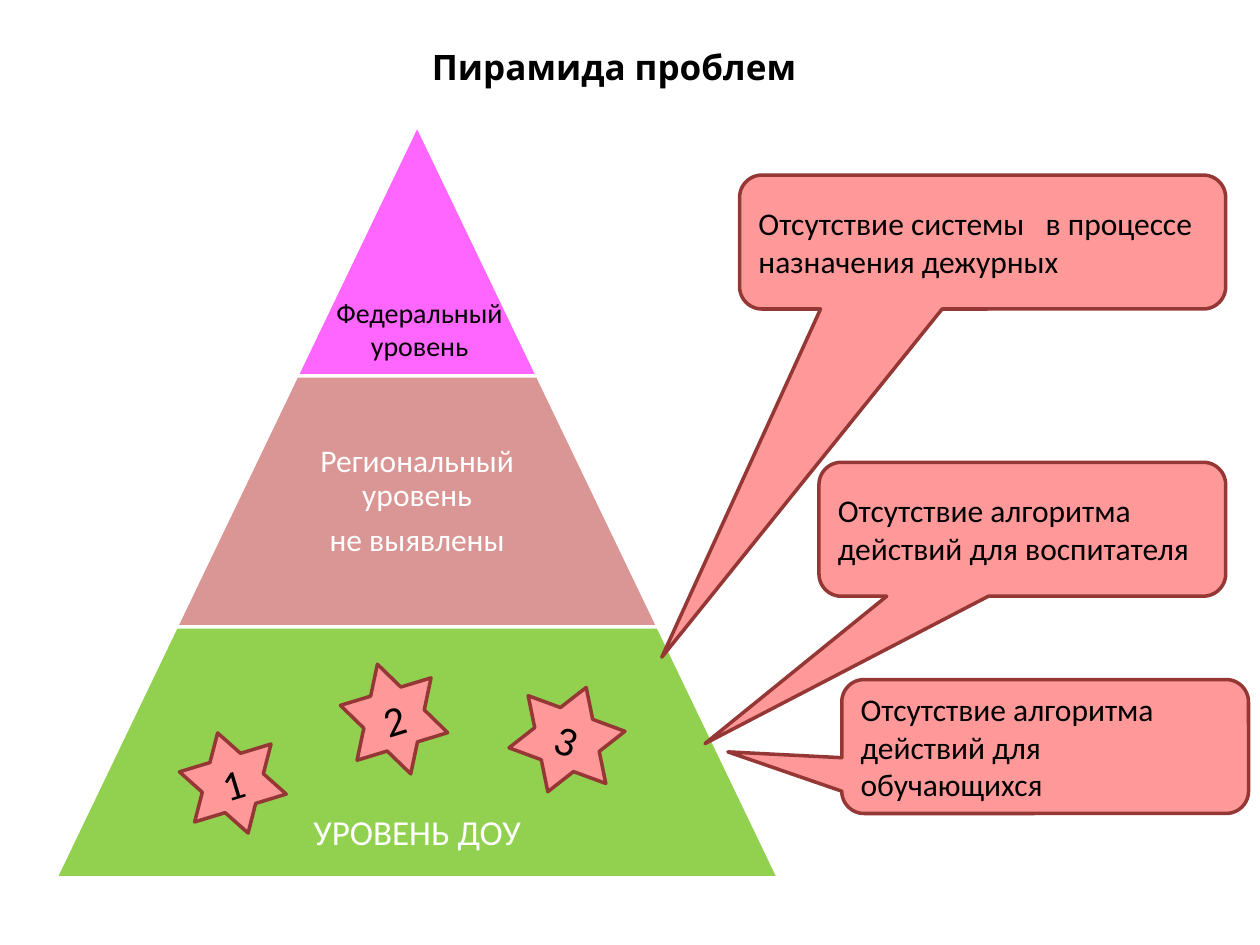
from dataclasses import dataclass

import pptx
import pptx.dml.color
import pptx.enum.shapes
import pptx.enum.text
import pptx.util

Cm = pptx.util.Cm
Pt = pptx.util.Pt
Shape = pptx.enum.shapes.MSO_SHAPE
Align = pptx.enum.text.PP_ALIGN
Anchor = pptx.enum.text.MSO_ANCHOR


@dataclass(frozen=True)
class Theme:
    title_font: str = "Karla"
    body_font: str = "Calibri"
    black: str = "000000"
    white: str = "FFFFFF"
    federal: str = "FF66FF"
    regional: str = "D99694"
    kindergarten: str = "92D050"
    problem: str = "FF9999"
    problem_edge: str = "953735"
    edge_width: float = 2
    small: int = 16
    body: int = 18
    large: int = 20
    number: int = 24


THEME = Theme()


@dataclass(frozen=True)
class Box:
    """Left, top, width and height in centimetres."""
    left: float
    top: float
    width: float
    height: float

    def lengths(self) -> tuple:
        return Cm(self.left), Cm(self.top), Cm(self.width), Cm(self.height)


@dataclass(frozen=True)
class Star:
    number: str
    box: Box
    rotation: float


@dataclass(frozen=True)
class Callout:
    text: str
    box: Box
    tip: tuple


# Pyramid geometry, in centimetres
APEX_X, APEX_Y = 8.41, 2.52
TIER_HEIGHT, TIER_HALF_WIDTH = 5.06, 2.43

TIER_FILLS = (THEME.federal, THEME.regional, THEME.kindergarten)

STARS = (
    Star("1", Box(3.73, 14.73, 1.93, 2.11), 343.1),
    Star("2", Box(6.99, 13.34, 1.91, 2.31), 343.1),
    Star("3", Box(10.39, 13.79, 2.08, 2.24), 20.2),
)

CALLOUTS = (
    Callout("Отсутствие системы   в процессе назначения дежурных",
            Box(14.91, 3.53, 9.8, 2.7), (-0.66, 3.1)),
    Callout("Отсутствие алгоритма действий для воспитателя",
            Box(16.51, 9.32, 8.2, 2.7), (-0.78, 1.6)),
    Callout("Отсутствие алгоритма действий для обучающихся",
            Box(16.97, 13.7, 8.2, 2.7), (-0.78, 0.04)),
)


def rgb(color: str) -> pptx.dml.color.RGBColor:
    return pptx.dml.color.RGBColor.from_string(color)


def write(frame, text: str, *, size: int = THEME.body, color: str = THEME.black,
          font: str = THEME.body_font, bold: bool = False, align=Align.CENTER,
          anchor=Anchor.MIDDLE, wrap: bool = True, line_spacing: float = 1.0,
          space_after: float = 0) -> None:
    """Fill a text frame, one paragraph for each line of text."""
    frame.text = text
    frame.word_wrap = wrap
    frame.vertical_anchor = anchor
    for paragraph in frame.paragraphs:
        paragraph.alignment = align
        paragraph.line_spacing = line_spacing
        paragraph.space_after = Pt(space_after)
        for run in paragraph.runs:
            run.font.name = font
            run.font.size = Pt(size)
            run.font.bold = bold
            run.font.color.rgb = rgb(color)


def add_figure(slide, kind, box: Box, fill: str, edge: str):
    figure = slide.shapes.add_shape(kind, *box.lengths())
    figure.shadow.inherit = False
    figure.fill.solid()
    figure.fill.fore_color.rgb = rgb(fill)
    figure.line.color.rgb = rgb(edge)
    figure.line.width = Pt(THEME.edge_width)
    return figure


def add_label(slide, text: str, box: Box, *, margin: float, bottom: float,
              **text_format) -> None:
    label = slide.shapes.add_textbox(*box.lengths())
    frame = label.text_frame
    frame.margin_left = frame.margin_right = frame.margin_top = Cm(margin)
    frame.margin_bottom = Cm(bottom)
    write(frame, text, **text_format)


def tier_top(level: int) -> float:
    return APEX_Y + level * TIER_HEIGHT


def add_tier(slide, level: int, fill: str) -> None:
    half_width = (level + 1) * TIER_HALF_WIDTH
    box = Box(APEX_X - half_width, tier_top(level), 2 * half_width, TIER_HEIGHT)
    tier = add_figure(slide, Shape.TRAPEZOID, box, fill, THEME.white)
    tier.adjustments[0] = TIER_HALF_WIDTH / min(box.width, box.height)


def add_star(slide, star: Star) -> None:
    figure = add_figure(slide, Shape.STAR_6_POINT, star.box,
                        THEME.problem, THEME.problem_edge)
    figure.rotation = star.rotation
    write(figure.text_frame, star.number, size=THEME.number)


def add_callout(slide, callout: Callout) -> None:
    figure = add_figure(slide, Shape.ROUNDED_RECTANGULAR_CALLOUT, callout.box,
                        THEME.problem, THEME.problem_edge)
    figure.adjustments[0], figure.adjustments[1] = callout.tip
    write(figure.text_frame, callout.text, align=Align.LEFT)


def main() -> None:
    deck = pptx.Presentation()
    deck.slide_width, deck.slide_height = Cm(25.4), Cm(19.05)
    slide = deck.slides.add_slide(deck.slide_layouts.get_by_name("Title Only"))

    # Title
    title = slide.shapes.title
    title.left, title.top, title.width, title.height = Box(
        1.27, 0.76, 22.22, 1.17).lengths()
    write(title.text_frame, "Пирамида проблем", size=THEME.large,
          font=THEME.title_font, bold=True)

    # Pyramid tiers
    for level, fill in enumerate(TIER_FILLS):
        add_tier(slide, level, fill)

    # Labels of the two lower tiers
    add_label(slide, "Региональный уровень\nне выявлены",
              Box(5.25, tier_top(1), 6.32, TIER_HEIGHT), margin=0.08, bottom=0.08,
              color=THEME.white, line_spacing=0.9, space_after=6.3)
    add_label(slide, "УРОВЕНЬ ДОУ",
              Box(3.66, tier_top(2), 9.5, TIER_HEIGHT), margin=0.1, bottom=0.5,
              size=THEME.large, color=THEME.white, anchor=Anchor.BOTTOM,
              line_spacing=0.9)

    # Numbered problems
    for star in STARS:
        add_star(slide, star)

    # Label of the top tier
    add_label(slide, "Федеральный\nуровень", Box(6.44, 5.82, 4.04, 1.63),
              margin=0.13, bottom=0.13, size=THEME.small, anchor=Anchor.TOP,
              wrap=False)

    # Problem descriptions
    for callout in CALLOUTS:
        add_callout(slide, callout)

    deck.save("out.pptx")


if __name__ == "__main__":
    main()
